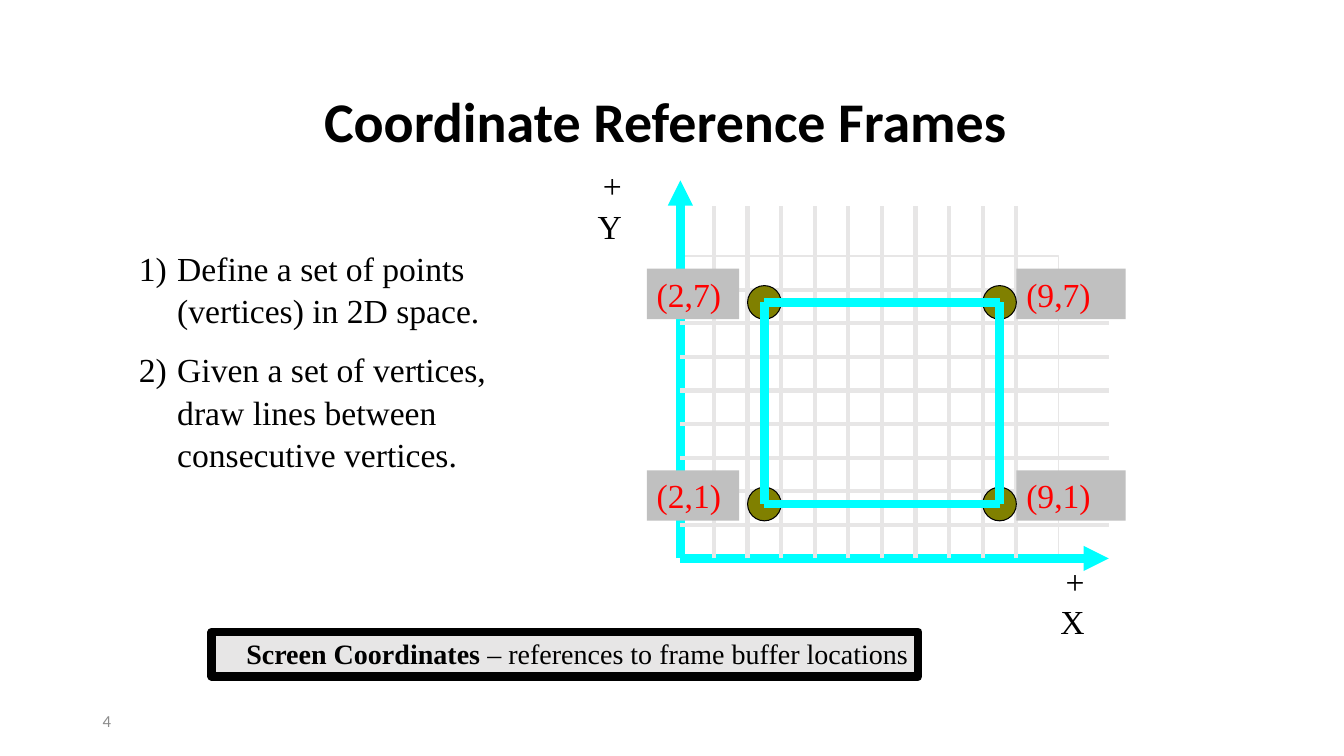
import pptx
import pptx.dml.color
import pptx.enum.shapes
import pptx.enum.text
import pptx.oxml.ns
import pptx.util
from lxml import etree

RGBColor = pptx.dml.color.RGBColor
Shape = pptx.enum.shapes.MSO_SHAPE
Align = pptx.enum.text.PP_ALIGN
Anchor = pptx.enum.text.MSO_ANCHOR
Pt = pptx.util.Pt
Inches = pptx.util.Inches

BLACK = RGBColor(0x00, 0x00, 0x00)
WHITE = RGBColor(0xFF, 0xFF, 0xFF)
PALE = RGBColor(0xE7, 0xE6, 0xE6)
SILVER = RGBColor(0xC0, 0xC0, 0xC0)
GRAY = RGBColor(0x8C, 0x8C, 0x8C)
CYAN = RGBColor(0x00, 0xFF, 0xFF)
OLIVE = RGBColor(0x80, 0x80, 0x00)
RED = RGBColor(0xFF, 0x00, 0x00)

SANS = "Calibri"
SERIF = "Times New Roman"

# The page is 40 columns by 22.5 rows; one cell of the plot is one column by one row.
PAGE_WIDTH, PAGE_HEIGHT = Inches(13.33), Inches(7.5)
COLUMN, ROW = PAGE_WIDTH / 40, PAGE_HEIGHT / 22.5
ORIGIN_COLUMN, ORIGIN_ROW = 20.25, 16.62

VERTICES = [(2, 1), (2, 7), (9, 7), (9, 1)]
STEPS = [
    "Define a set of points (vertices) in 2D space.",
    "Given a set of vertices, draw lines between consecutive vertices.",
]


def grid(column, row):
    return round(column * COLUMN), round(row * ROW)


def on_plot(x, y):
    """Column and row of a point given in plot units."""
    return ORIGIN_COLUMN + x, ORIGIN_ROW - y


def vertex_center(x, y):
    return on_plot(x + 0.5, y + 0.62)


def add_span(para, text, size, color=BLACK, font=SERIF, bold=False):
    span = para.add_run()
    span.text = text
    span.font.size = Pt(size)
    span.font.name = font
    span.font.bold = bold
    span.font.color.rgb = color


def add_box(page, column, row, width, height, anchor=Anchor.MIDDLE):
    box = page.shapes.add_textbox(*grid(column, row), *grid(width, height))
    box.text_frame.word_wrap = True
    box.text_frame.vertical_anchor = anchor
    return box.text_frame


def add_figure(page, kind, column, row, width, height, fill, line=None, weight=0.75):
    figure = page.shapes.add_shape(kind, *grid(column, row), *grid(width, height))
    figure.shadow.inherit = False
    figure.fill.solid()
    figure.fill.fore_color.rgb = fill
    if line is None:
        figure.line.fill.background()
    else:
        figure.line.color.rgb = line
        figure.line.width = Pt(weight)
    figure.text_frame.vertical_anchor = Anchor.TOP
    return figure.text_frame


def add_line(page, start, end, color, weight, arrow=False):
    line = page.shapes.add_connector(
        pptx.enum.shapes.MSO_CONNECTOR.STRAIGHT, *grid(*start), *grid(*end))
    line.line.color.rgb = color
    line.line.width = Pt(weight)
    if arrow:
        etree.SubElement(line.line._get_or_add_ln(),
                         pptx.oxml.ns.qn("a:tailEnd"), type="triangle")
    etree.SubElement(line._element.spPr, pptx.oxml.ns.qn("a:effectLst"))


def add_steps(page):
    frame = add_box(page, 3.84, 6.69, 11.67, 10.59, Anchor.TOP)
    frame.margin_top = Inches(0.21)
    for index, step in enumerate(STEPS):
        para = frame.paragraphs[0] if index == 0 else frame.add_paragraph()
        para.line_spacing = 1.05
        para.space_after = Pt(12)
        properties = para._p.get_or_add_pPr()
        properties.set("marL", str(Inches(0.38)))
        properties.set("indent", str(-Inches(0.38)))
        etree.SubElement(properties, pptx.oxml.ns.qn("a:buFont"), typeface=SERIF)
        etree.SubElement(properties, pptx.oxml.ns.qn("a:buAutoNum"), type="arabicParenR")
        add_span(para, step, 24)


def add_axis_name(page, text, column, row):
    """Name an axis in a box so narrow that sign and letter stack."""
    frame = add_box(page, column, row, 1.89, 1.5)
    frame.margin_left, frame.margin_right = Inches(0.05), Inches(0.29)
    frame.paragraphs[0].alignment = Align.RIGHT
    add_span(frame.paragraphs[0], text, 24)


def add_plot(page):
    add_figure(page, Shape.RECTANGLE, *on_plot(0, 9), 11.25, 9, WHITE, PALE)
    for end in [(0, 11.25), (12.75, 0)]:
        add_line(page, on_plot(0, 0), on_plot(*end), CYAN, 6, arrow=True)
    add_axis_name(page, "+X", 31.26, 17.13)
    add_axis_name(page, "+Y", 17.49, 5.37)
    for x in range(1, 11):
        add_line(page, on_plot(x, 0), on_plot(x, 10.5), PALE, 3)
    for y in range(1, 9):
        add_line(page, on_plot(0, y), on_plot(12.75, y), PALE, 3)


def add_vertex(page, x, y):
    column, row = vertex_center(x, y)
    label_x, label_width = (-1, 2.75) if x == 2 else (10, 3.25)
    label = add_figure(page, Shape.RECTANGLE, ORIGIN_COLUMN + label_x, row - 1,
                       label_width, 1.5, SILVER)
    label.paragraphs[0].alignment = Align.LEFT
    add_span(label.paragraphs[0], f"({x},{y})", 24, RED)
    add_figure(page, Shape.OVAL, column - 0.5, row - 0.5, 1, 1, OLIVE, BLACK)


def main():
    deck = pptx.Presentation()
    deck.slide_width, deck.slide_height = PAGE_WIDTH, PAGE_HEIGHT
    page = deck.slides.add_slide(deck.slide_layouts[6])

    number = add_box(page, 2.76, 20.85, 9, 1.2)
    add_span(number.paragraphs[0], "4", 12, GRAY, SANS)

    title = add_box(page, 6.3, 2.52, 27, 2.37)
    title.paragraphs[0].alignment = Align.CENTER
    title.paragraphs[0].line_spacing = 0.9
    add_span(title.paragraphs[0], "Coordinate Reference Frames", 40, font=SANS, bold=True)

    add_steps(page)

    note = add_figure(page, Shape.RECTANGLE, 6.3, 18.81, 21.03, 1.32, PALE, BLACK, 6)
    note.paragraphs[0].alignment = Align.RIGHT
    add_span(note.paragraphs[0], "Screen Coordinates", 20, bold=True)
    add_span(note.paragraphs[0], " – references to frame buffer locations", 20)

    add_plot(page)
    for vertex in VERTICES:
        add_vertex(page, *vertex)
    for start, end in zip(VERTICES, VERTICES[1:] + VERTICES[:1]):
        add_line(page, vertex_center(*start), vertex_center(*end), CYAN, 6)

    deck.save("out.pptx")


if __name__ == "__main__":
    main()
